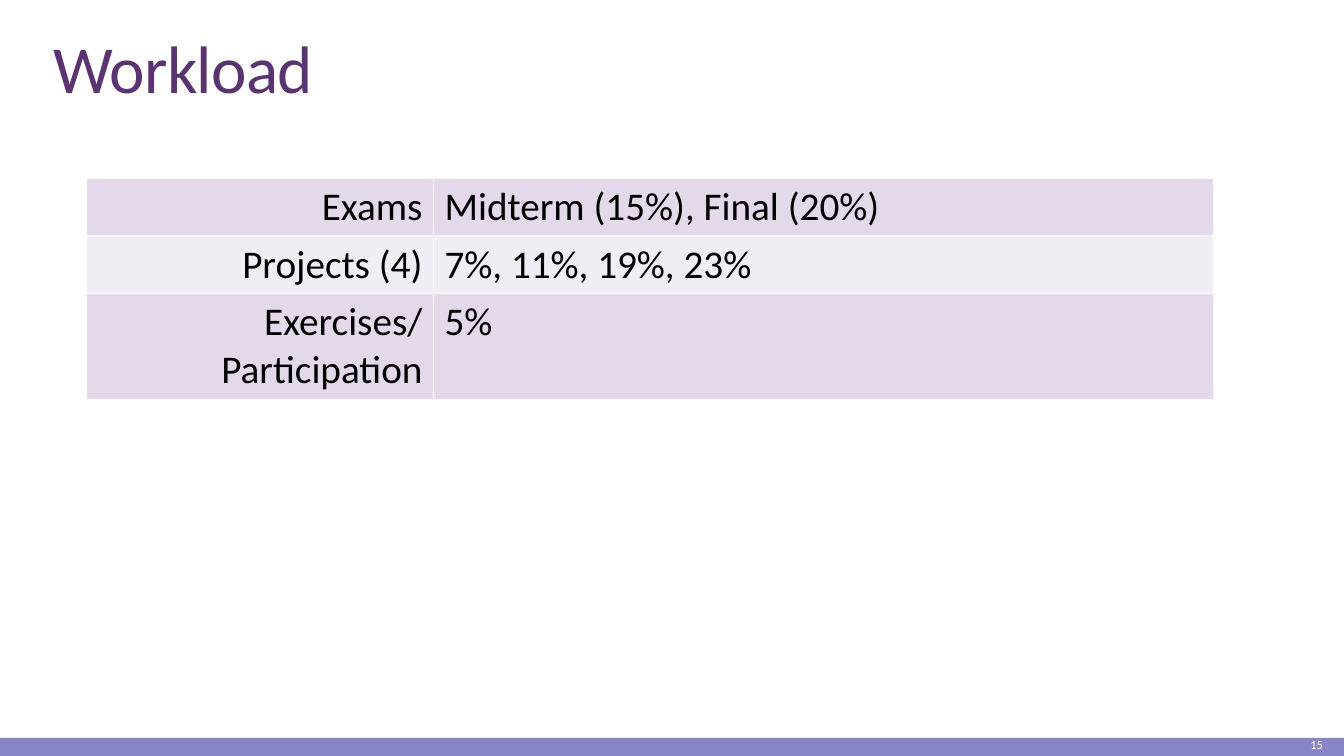
from dataclasses import dataclass

from lxml import etree
from pptx import Presentation
from pptx import util as u
from pptx.dml.color import RGBColor
from pptx.enum import shapes, text
from pptx.oxml import ns

PX = 9144


@dataclass(frozen=True)
class Theme:
    font: str = "Calibri"
    title_color: str = "5A3471"
    body_color: str = "000000"
    white: str = "FFFFFF"
    footer_fill: str = "8784C7"
    band_fills: tuple = ("E3D9EA", "F1EDF5")
    title_size: float = 48
    table_size: float = 28
    number_size: float = 8.9


class SlideBuilder:
    def __init__(self, presentation, theme):
        self.theme = theme
        self.slide = presentation.slides.add_slide(presentation.slide_layouts[5])

    def box(self, *lengths):
        return [length * PX for length in lengths]

    def add_run(self, paragraph, words, size, color):
        run = paragraph.add_run()
        run.text = words
        run.font.name = self.theme.font
        run.font.size = u.Pt(size)
        run.font.color.rgb = RGBColor.from_string(color)
        return run

    def title(self, words, *place):
        shape = self.slide.shapes.title
        shape.left, shape.top, shape.width, shape.height = self.box(*place)
        frame = shape.text_frame
        frame.auto_size = text.MSO_AUTO_SIZE.NONE
        frame.vertical_anchor = text.MSO_ANCHOR.BOTTOM
        paragraph = frame.paragraphs[0]
        paragraph.alignment = text.PP_ALIGN.LEFT
        paragraph.line_spacing = 0.85
        run = self.add_run(paragraph, words, self.theme.title_size, self.theme.title_color)
        run.font._element.set("spc", "-50")

    def bar(self, *place):
        shape = self.slide.shapes.add_shape(shapes.MSO_SHAPE.RECTANGLE, *self.box(*place))
        shape.shadow.inherit = False
        shape.fill.solid()
        shape.fill.fore_color.rgb = RGBColor.from_string(self.theme.footer_fill)
        shape.line.fill.background()

    def page_number(self, words, *place):
        frame = self.slide.shapes.add_textbox(*self.box(*place)).text_frame
        frame.word_wrap = True
        frame.vertical_anchor = text.MSO_ANCHOR.MIDDLE
        paragraph = frame.paragraphs[0]
        paragraph.alignment = text.PP_ALIGN.RIGHT
        self.add_run(paragraph, words, self.theme.number_size, self.theme.white)

    def border(self, cell):
        properties = cell._tc.get_or_add_tcPr()
        for index, side in enumerate(("lnL", "lnR", "lnT", "lnB")):
            line = etree.Element(ns.qn(f"a:{side}"), w=str(u.Pt(1)))
            fill = etree.SubElement(line, ns.qn("a:solidFill"))
            etree.SubElement(fill, ns.qn("a:srgbClr"), val=self.theme.white)
            properties.insert(index, line)

    def table(self, rows, left, top, widths, heights):
        place = self.box(left, top, sum(widths), sum(heights))
        table = self.slide.shapes.add_table(len(rows), len(widths), *place).table
        table.first_row = False
        for column, width in zip(table.columns, widths):
            column.width = width * PX
        for index, (row, height) in enumerate(zip(rows, heights)):
            table.rows[index].height = height * PX
            for column, words in enumerate(row):
                align = text.PP_ALIGN.LEFT if column else text.PP_ALIGN.RIGHT
                self.cell(table.cell(index, column), words, align, self.theme.band_fills[index % 2])

    def cell(self, cell, words, align, fill):
        cell.margin_left = cell.margin_right = 11 * PX
        cell.margin_top = cell.margin_bottom = 5 * PX
        cell.fill.solid()
        cell.fill.fore_color.rgb = RGBColor.from_string(fill)
        self.border(cell)
        paragraph = cell.text_frame.paragraphs[0]
        paragraph.alignment = align
        for index, line in enumerate(words.split("\n")):
            if index:
                paragraph.add_line_break()
            self.add_run(paragraph, line, self.theme.table_size, self.theme.body_color)


def main():
    presentation = Presentation()
    presentation.slide_width, presentation.slide_height = 1333 * PX, 750 * PX
    builder = SlideBuilder(presentation, Theme())
    builder.bar(0, 732, 1333, 18)
    builder.title("Workload", 43, 31, 1264, 80)
    builder.page_number("15", 1179, 728, 143, 22)
    workload = [
        ("Exams", "Midterm (15%), Final (20%)"),
        ("Projects (4)", "7%, 11%, 19%, 23%"),
        ("Exercises/\nParticipation", "5%"),
    ]
    builder.table(workload, 86, 177, (344, 774), (57, 57, 105))
    presentation.save("out.pptx")


if __name__ == "__main__":
    main()
